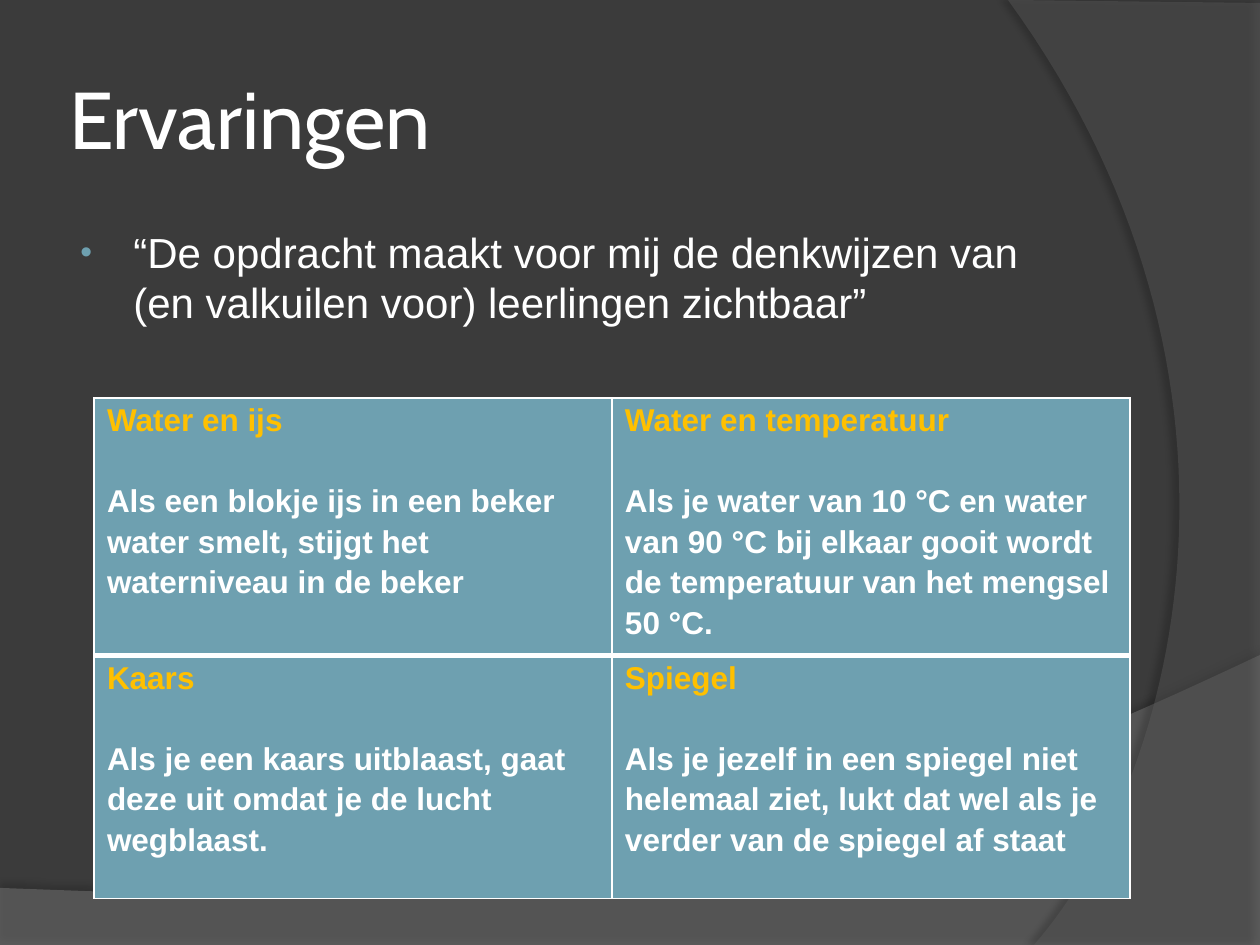
from dataclasses import dataclass

from lxml.etree import SubElement
from pptx import Presentation
from pptx.dml.color import RGBColor
from pptx.enum.text import MSO_ANCHOR
from pptx.oxml.ns import qn
from pptx.util import Pt

PX = 7257.14  # EMU in one px, at 126 px to the inch


@dataclass(frozen=True)
class Theme:
    back: str = "3B3B3B"
    wave: str = "7F7F7F"
    arc: str = "5E5E5E"
    text: str = "FFFFFF"
    accent: str = "6EA0B0"
    head: str = "FFC000"
    shade: str = "000000"
    title_font: str = "Cabin"
    body_font: str = "Arial"
    title_size: int = 46
    body_size: int = 24
    cell_size: int = 18


THEME = Theme()

CELLS = [
    [("Water en ijs",
      "Als een blokje ijs in een beker water smelt, stijgt het waterniveau in de beker"),
     ("Water en temperatuur",
      "Als je water van 10 °C en water van 90 °C bij elkaar gooit wordt "
      "de temperatuur van het mengsel 50 °C.")],
    [("Kaars",
      "Als je een kaars uitblaast, gaat deze uit omdat je de lucht wegblaast."),
     ("Spiegel",
      "Als je jezelf in een spiegel niet helemaal ziet, lukt dat wel als je "
      "verder van de spiegel af staat")],
]


def px(n):
    return round(n * PX)


def rgb(code):
    return RGBColor.from_string(code)


def add_node(parent, tag, **attrs):
    return SubElement(parent, qn(tag), {k: str(v) for k, v in attrs.items()})


def add_color(parent, code, alpha=100):
    node = add_node(parent, "a:srgbClr", val=code)
    if alpha < 100:
        add_node(node, "a:alpha", val=alpha * 1000)


def bezier(a, b, c, d, steps=60):
    """Points on a cubic curve from a to d, with b and c as controls."""
    for i in range(steps + 1):
        t = i / steps
        u = 1 - t
        yield tuple(u**3 * p + 3 * u * u * t * q + 3 * u * t * t * r + t**3 * s
                    for p, q, r, s in zip(a, b, c, d))


def add_swoosh(slide, corners, curve, color, alpha, shade, dist, angle):
    """Translucent shape: straight corners closed by a curve, with a soft shadow."""
    points = [(px(x), px(y)) for x, y in [*corners, *bezier(*curve)]]
    pen = slide.shapes.build_freeform(*points[0])
    pen.add_line_segments(points[1:], close=True)
    shape = pen.convert_to_shape()
    shape.line.fill.background()
    shape.fill.solid()
    shape.fill.fore_color.rgb = rgb(color)
    props = shape.element.spPr
    tone = props.find(qn("a:solidFill")).find(qn("a:srgbClr"))
    add_node(tone, "a:alpha", val=alpha * 1000)
    shape.shadow.inherit = False
    glow = add_node(props.find(qn("a:effectLst")), "a:outerShdw", blurRad=Pt(4),
                    dist=Pt(dist), dir=angle * 60000, algn="ctr", rotWithShape=0)
    add_color(glow, THEME.shade, shade)


def set_font(para, name, size, color, bold=False):
    font = para.font
    font.name, font.size, font.bold = name, Pt(size), bold
    font.color.rgb = rgb(color)


def add_text(slide, box, text, name, size):
    frame = slide.shapes.add_textbox(*map(px, box)).text_frame
    frame.word_wrap = True
    para = frame.paragraphs[0]
    para.text = text
    set_font(para, name, size, THEME.text)
    return frame


def add_title(slide, text):
    frame = add_text(slide, (63, 38, 1029, 158), text,
                     THEME.title_font, THEME.title_size)
    frame.vertical_anchor = MSO_ANCHOR.MIDDLE
    frame.margin_left = frame.margin_right = px(6)


def add_quote(slide, text):
    frame = add_text(slide, (63, 220, 1029, 624), text,
                     THEME.body_font, THEME.body_size)
    para = frame.paragraphs[0]
    para.space_before = Pt(THEME.body_size * 0.2)
    props = para._p.get_or_add_pPr()
    props.set("marL", str(px(58)))
    props.set("indent", str(px(-53)))
    mark = [add_node(props, "a:buClr"),
            add_node(props, "a:buSzPct", val=80000),
            add_node(props, "a:buFont", typeface=THEME.body_font),
            add_node(props, "a:buChar", char="•")]
    add_color(mark[0], THEME.accent)
    for node in reversed(mark):
        props.remove(node)
        props.insert(1 if props.find(qn("a:spcBef")) is not None else 0, node)


def set_edges(cell, top, bottom):
    props = cell._tc.get_or_add_tcPr()
    widths = {"a:lnL": 1, "a:lnR": 1, "a:lnT": top, "a:lnB": bottom}
    for i, (tag, width) in enumerate(widths.items()):
        line = add_node(props, tag, w=Pt(width))
        add_color(add_node(line, "a:solidFill"), THEME.text)
        props.insert(i, line)


def fill_cell(cell, head, body):
    cell.fill.solid()
    cell.fill.fore_color.rgb = rgb(THEME.accent)
    cell.margin_left = cell.margin_right = px(13)
    cell.margin_top = cell.margin_bottom = 0
    frame = cell.text_frame
    first, second = frame.paragraphs[0], frame.add_paragraph()
    for para, text, color in ((first, head, THEME.head), (second, body, THEME.text)):
        para.text = text
        para.line_spacing = 1.15
        set_font(para, THEME.body_font, THEME.cell_size, color, bold=True)
    first.space_after = Pt(23)


def add_grid(slide, cells):
    rows, cols = len(cells), len(cells[0])
    table = slide.shapes.add_table(rows, cols, px(94), px(398),
                                   px(518 * cols), px(243 * rows)).table
    for r, row in enumerate(cells):
        for c, (head, body) in enumerate(row):
            cell = table.cell(r, c)
            fill_cell(cell, head, body)
            set_edges(cell, top=3 if r else 1, bottom=3 if r < rows - 1 else 1)


def main():
    deck = Presentation()
    deck.slide_width, deck.slide_height = px(1260), px(945)
    slide = deck.slides.add_slide(deck.slide_layouts[6])
    slide.background.fill.solid()
    slide.background.fill.fore_color.rgb = rgb(THEME.back)
    add_swoosh(slide, [(0, 888), (0, 946), (1260, 946)],
               [(1260, 655), (704, 919), (493, 906), (0, 888)],
               THEME.wave, 45, shade=35, dist=3.5, angle=270)
    add_swoosh(slide, [(1260, 3), (1260, 945)],
               [(1034, 945), (1178, 780), (1283, 378), (1008, 0)],
               THEME.arc, 40, shade=45, dist=4, angle=180)
    add_title(slide, "Ervaringen")
    add_quote(slide, "“De opdracht maakt voor mij de denkwijzen van "
                     "(en valkuilen voor) leerlingen zichtbaar”")
    add_grid(slide, CELLS)
    deck.save("out.pptx")


if __name__ == "__main__":
    main()
